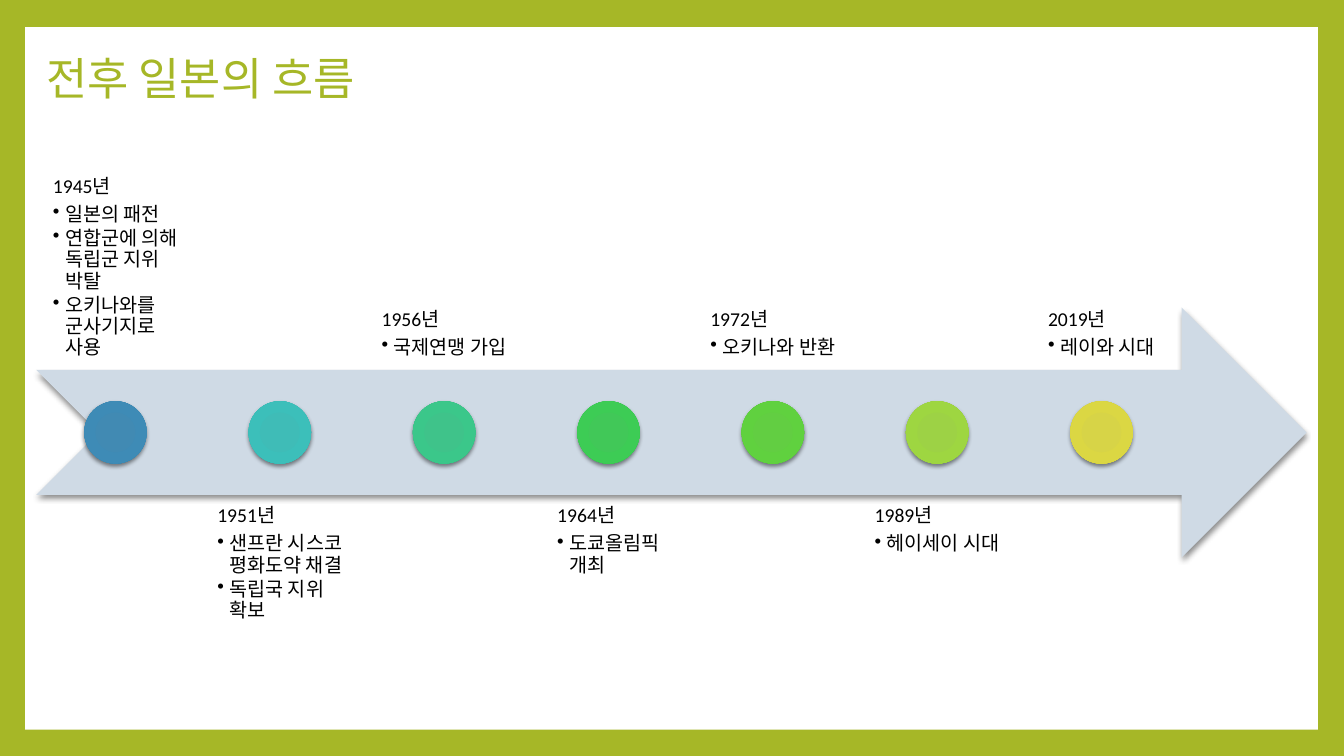
import lxml.etree
import pptx
import pptx.dml.color
import pptx.enum.shapes
import pptx.enum.text
import pptx.oxml
import pptx.oxml.ns
import pptx.util

Inches = pptx.util.Inches
Pt = pptx.util.Pt
SHAPE = pptx.enum.shapes.MSO_SHAPE
ANCHOR = pptx.enum.text.MSO_ANCHOR
qn = pptx.oxml.ns.qn

GREEN = "A6B727"
FONT = "Calibri"

# Year, events, and the dot's gradient from centre to rim
EVENTS = [
    ("1945년", ["일본의 패전", "연합군에 의해 독립군 지위 박탈", "오키나와를 군사기지로 사용"],
     ("418AB3", "3E8BB6", "3180AD")),
    ("1951년", ["샌프란 시스코 평화도약 채결", "독립국 지위 확보"],
     ("3FBCB7", "3CBFBA", "2EB6B1")),
    ("1956년", ["국제연맹 가입"], ("3FC38A", "3BC78A", "2DBD7F")),
    ("1964년", ["도쿄올림픽 개최"], ("41C858", "3DCC55", "2EC247")),
    ("1972년", ["오키나와 반환"], ("62CE42", "60D13F", "52C730")),
    ("1989년", ["헤이세이 시대"], ("9DD245", "9ED641", "92CC31")),
    ("2019년", ["레이와 시대"], ("D7D447", "DBD743", "D0CD33")),
]


def color(value):
    return pptx.dml.color.RGBColor.from_string(value)


def add_plain_shape(page, kind, left, top, width, height, fill):
    shape = page.shapes.add_shape(
        kind, Inches(left), Inches(top), Inches(width), Inches(height))
    shape.shadow.inherit = False
    shape.fill.solid()
    shape.fill.fore_color.rgb = color(fill)
    shape.line.fill.background()
    return shape


def add_text_box(page, left, top, width, height, anchor, inset):
    box = page.shapes.add_textbox(
        Inches(left), Inches(top), Inches(width), Inches(height))
    frame = box.text_frame
    frame.word_wrap = True
    frame.vertical_anchor = anchor
    frame.margin_left = frame.margin_right = Inches(inset)
    frame.margin_top = frame.margin_bottom = Inches(inset)
    return frame


def format_para(para, size, fill):
    para.line_spacing = 0.9
    for span in para.runs:
        span.font.name = FONT
        span.font.size = Pt(size)
        span.font.color.rgb = color(fill)


def add_soft_shadow(shape):
    effects = shape._element.spPr.find(qn("a:effectLst"))
    effects.append(pptx.oxml.parse_xml(
        f'<a:outerShdw {pptx.oxml.ns.nsdecls("a")} blurRad="{Pt(3)}" dist="{Pt(2)}" '
        'dir="5400000" rotWithShape="0"><a:srgbClr val="000000">'
        '<a:alpha val="45000"/></a:srgbClr></a:outerShdw>'))


def set_round_gradient(shape, colors):
    stops = "".join(
        f'<a:gs pos="{percent * 1000}"><a:srgbClr val="{value}"/></a:gs>'
        for percent, value in zip((0, 90, 100), colors))
    gradient = pptx.oxml.parse_xml(
        f'<a:gradFill {pptx.oxml.ns.nsdecls("a")} rotWithShape="1">'
        f'<a:gsLst>{stops}</a:gsLst><a:path path="circle">'
        '<a:fillToRect l="100000" t="100000" r="100000" b="100000"/>'
        '</a:path></a:gradFill>')
    properties = shape._element.spPr
    properties.replace(properties.find(qn("a:solidFill")), gradient)


def set_bullet(para):
    para.level = 1
    properties = para._p.get_or_add_pPr()
    properties.set("marL", str(Inches(0.12)))
    properties.set("indent", str(-Inches(0.12)))
    lxml.etree.SubElement(properties, qn("a:buChar")).set("char", "•")


def add_frame(page):
    page.background.fill.solid()
    page.background.fill.fore_color.rgb = color(GREEN)
    add_plain_shape(page, SHAPE.RECTANGLE, 0.25, 0.27, 12.82, 6.97, "FFFFFF")


def add_title(page, left, top, width, height):
    frame = add_text_box(page, left, top, width, height, ANCHOR.MIDDLE, 0.1)
    frame.text = "전후 일본의 흐름"
    format_para(frame.paragraphs[0], 32, GREEN)


def add_event_text(page, left, top, width, height, anchor, year, items):
    frame = add_text_box(page, left, top, width, height, anchor, 0.11)
    # Centre the left-aligned text block within its box
    frame._txBody.bodyPr.set("anchorCtr", "1")
    frame.text = "\n".join([year, *items])
    for index, para in enumerate(frame.paragraphs):
        format_para(para, 14, "000000")
        para.space_after = Pt(2.1 if index else 4.9)
        if index:
            set_bullet(para)


def add_timeline(page, left, top, width, height):
    arrow = add_plain_shape(
        page, SHAPE.NOTCHED_RIGHT_ARROW, left, top, width, height, "CFDAE5")
    add_soft_shadow(arrow)
    pitch, text_width, dot = 1.63, 1.55, 0.62
    shaft = height / 2
    for index, (year, items, colors) in enumerate(EVENTS):
        # Events alternate above and below the shaft
        above = index % 2 == 0
        text_left = left + 0.01 + index * pitch
        text_top = top + shaft / 2 - height if above else top + 1.5 * shaft
        add_event_text(page, text_left, text_top, text_width, height,
                       ANCHOR.BOTTOM if above else ANCHOR.TOP, year, items)
        marker = add_plain_shape(
            page, SHAPE.OVAL, text_left + (text_width - dot) / 2,
            top + (height - dot) / 2, dot, dot, colors[0])
        set_round_gradient(marker, colors)
        add_soft_shadow(marker)


def main():
    deck = pptx.Presentation()
    deck.slide_width, deck.slide_height = Inches(13.33), Inches(7.5)
    page = deck.slides.add_slide(deck.slide_layouts[6])
    add_frame(page)
    add_title(page, 0.36, 0.27, 5.73, 1.06)
    add_timeline(page, 0.36, 3.05, 12.6, 2.48)
    deck.save("out.pptx")


if __name__ == "__main__":
    main()
